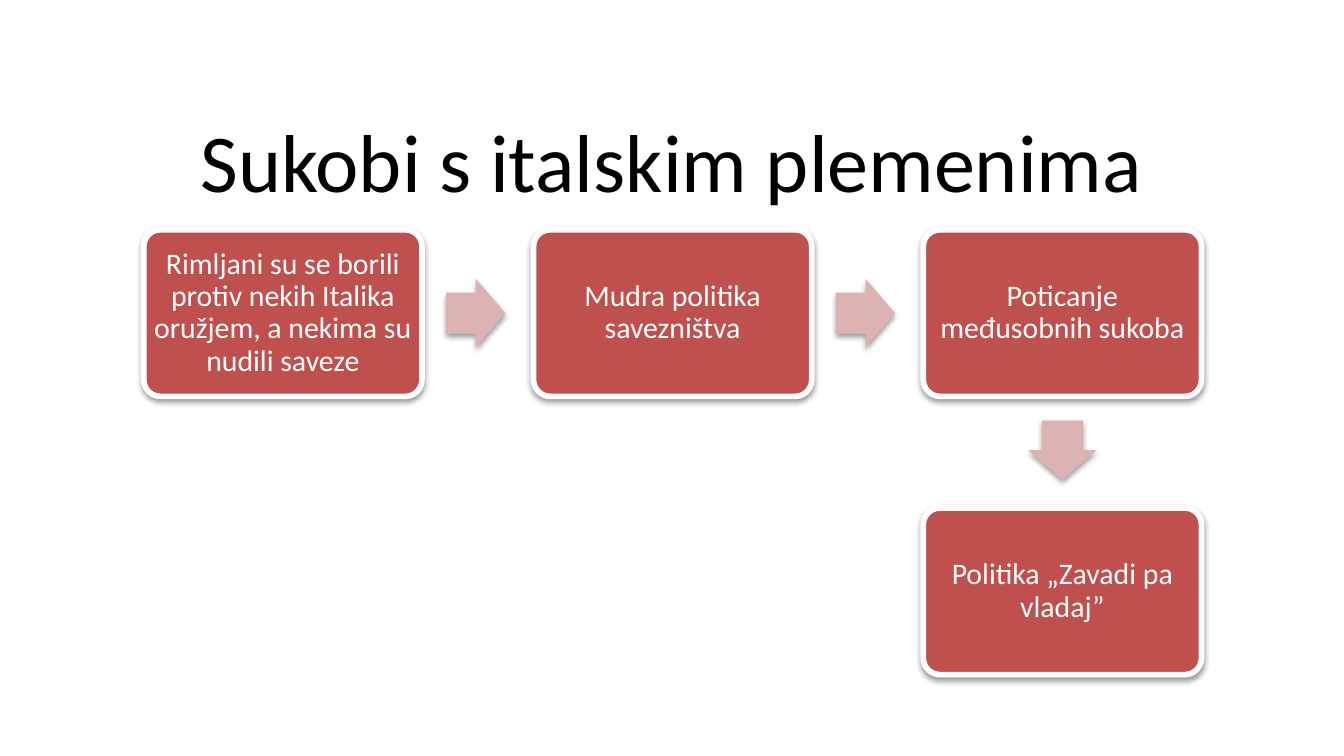
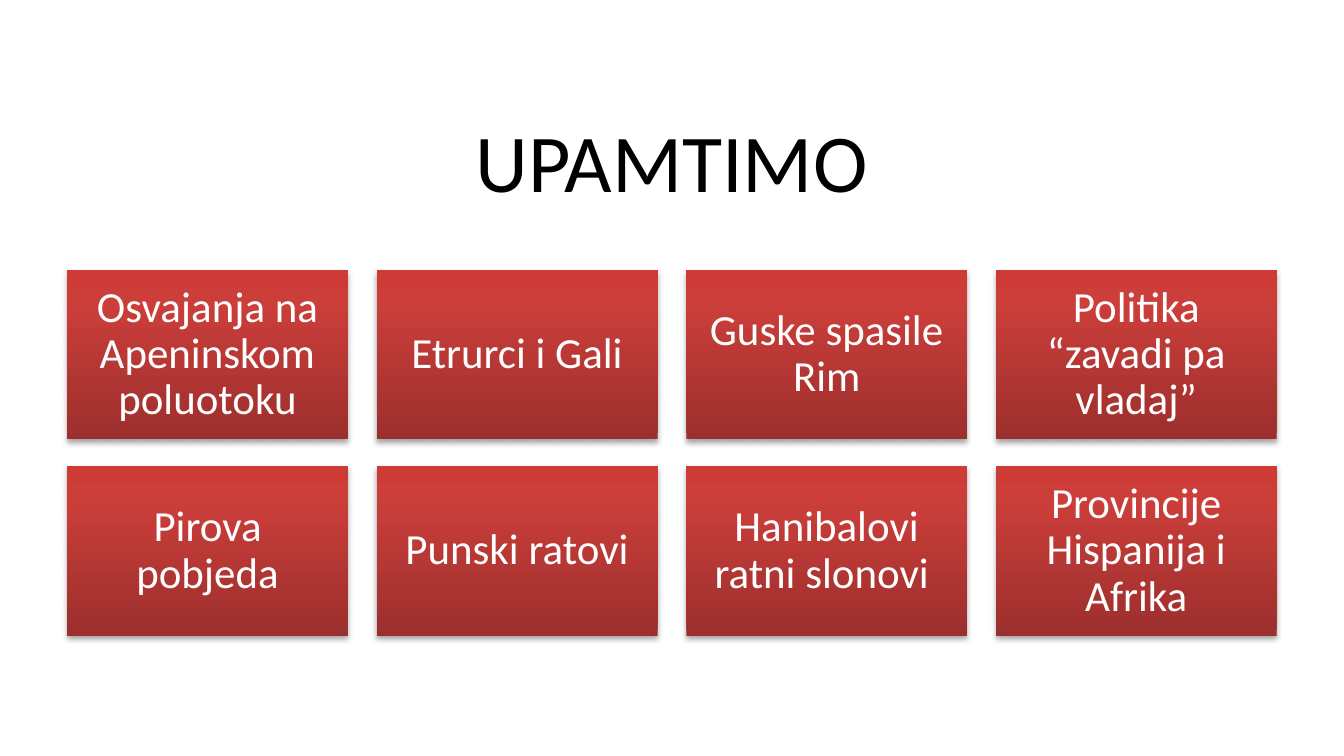
from dataclasses import dataclass

from lxml.etree import SubElement
from pptx import Presentation
from pptx.dml.color import RGBColor
from pptx.enum.shapes import MSO_SHAPE
from pptx.enum.text import MSO_ANCHOR, PP_ALIGN
from pptx.oxml.ns import qn
from pptx.shapes.autoshape import Shape
from pptx.slide import Slide
from pptx.util import Inches, Pt

WIDTH = 10
HEIGHT = WIDTH * 9 / 16
MARGIN = 0.05 * WIDTH
FONT = "Calibri"
COLORS = {
    "title": "000000",
    "text": "FFFFFF",
    "step": "C0504D",
    "step_edge": "FFFFFF",
    "arrow": "DCB3B2",
    "shadow": "000000",
    "tile_dark": "9C2F2D",
    "tile_mid": "CB3E3A",
    "tile_light": "CE3B37",
}
TILE_STOPS = ((0, "tile_dark"), (80, "tile_mid"), (100, "tile_light"))


@dataclass(frozen=True)
class Area:
    left: float
    top: float
    width: float
    height: float

    def lengths(self) -> tuple:
        return tuple(Inches(v) for v in (self.left, self.top, self.width, self.height))


@dataclass(frozen=True)
class Grid:
    left: float
    top: float
    cell_width: float
    cell_height: float
    column_gap: float
    row_gap: float

    def cell(self, column: int, row: int) -> Area:
        return Area(
            self.left + column * (self.cell_width + self.column_gap),
            self.top + row * (self.cell_height + self.row_gap),
            self.cell_width,
            self.cell_height,
        )


@dataclass(frozen=True)
class Shadow:
    opacity: int
    distance: float
    blur: float = 3.1


@dataclass(frozen=True)
class Card:
    text: str
    column: int
    row: int


# Step chart: three columns, the last one continuing downwards
STEP_GRID = Grid(1.07, 1.71, 2.07, 1.24, 0.83, 0.83)
STEP_SHADOW = Shadow(opacity=38, distance=1.6)
STEPS = (
    Card("Rimljani su se borili protiv nekih Italika oružjem, a nekima su nudili saveze", 0, 0),
    Card("Mudra politika savezništva", 1, 0),
    Card("Poticanje međusobnih sukoba", 2, 0),
    Card("Politika „Zavadi pa vladaj”", 2, 1),
)
ARROW_LENGTH, ARROW_BREADTH, ARROW_OFFSET = 0.44, 0.51, 0.18

# Summary tiles: four columns across the width between the margins
TILE_COLUMNS = 4
TILE_WIDTH = 2.09
TILE_GAP = (WIDTH - 2 * MARGIN - TILE_COLUMNS * TILE_WIDTH) / (TILE_COLUMNS - 1)
TILE_GRID = Grid(MARGIN, 2.01, TILE_WIDTH, 1.26, TILE_GAP, 0.2)
TILE_SHADOW = Shadow(opacity=35, distance=1.8)
TILE_TEXTS = (
    "Osvajanja na Apeninskom poluotoku",
    "Etrurci i Gali",
    "Guske spasile Rim",
    "Politika “zavadi pa vladaj”",
    "Pirova pobjeda",
    "Punski ratovi",
    "Hanibalovi ratni slonovi ",
    "Provincije Hispanija i Afrika",
)


def rgb(name: str) -> RGBColor:
    return RGBColor.from_string(COLORS[name])


def write_text(box: Shape, text: str, size: int, color: str) -> None:
    frame = box.text_frame
    frame.word_wrap = True
    frame.vertical_anchor = MSO_ANCHOR.MIDDLE
    frame.text = text
    para = frame.paragraphs[0]
    para.alignment = PP_ALIGN.CENTER
    para.line_spacing = 0.9
    font = para.runs[0].font
    font.name, font.size = FONT, Pt(size)
    font.color.rgb = rgb(color)


def write_label(box: Shape, text: str, size: int, inset: float) -> None:
    write_text(box, text, size, "text")
    frame = box.text_frame
    frame.margin_left = frame.margin_right = Inches(inset)
    frame.margin_top = frame.margin_bottom = Inches(inset)
    properties = frame.paragraphs[0]._p.get_or_add_pPr()
    SubElement(SubElement(properties, qn("a:spcAft")), qn("a:spcPct"), val="35000")


def add_shadow(shape: Shape, shadow: Shadow) -> None:
    shape.shadow.inherit = False
    effects = shape._element.spPr.find(qn("a:effectLst"))
    outer = SubElement(
        effects, qn("a:outerShdw"), blurRad=str(Pt(shadow.blur)),
        dist=str(Pt(shadow.distance)), dir="5400000", rotWithShape="0",
    )
    color = SubElement(outer, qn("a:srgbClr"), val=COLORS["shadow"])
    SubElement(color, qn("a:alpha"), val=str(shadow.opacity * 1000))


def fill_tile(tile: Shape) -> None:
    tile.fill.gradient()
    tile.fill.gradient_angle = 90
    stops = tile._element.spPr.find(qn("a:gradFill")).find(qn("a:gsLst"))
    for stop in list(stops):
        stops.remove(stop)
    for position, name in TILE_STOPS:
        stop = SubElement(stops, qn("a:gs"), pos=str(position * 1000))
        SubElement(stop, qn("a:srgbClr"), val=COLORS[name])


def add_step(page: Slide, step: Card) -> None:
    area = STEP_GRID.cell(step.column, step.row)
    box = page.shapes.add_shape(MSO_SHAPE.ROUNDED_RECTANGLE, *area.lengths())
    box.adjustments[0] = 0.1
    box.fill.solid()
    box.fill.fore_color.rgb = rgb("step")
    box.line.color.rgb = rgb("step_edge")
    box.line.width = Pt(3)
    add_shadow(box, STEP_SHADOW)
    write_label(box, step.text, 16, inset=0.03)


def add_arrow(page: Slide, start: Card, end: Card) -> None:
    area = STEP_GRID.cell(start.column, start.row)
    center_x = area.left + area.width / 2
    center_y = area.top + area.height / 2
    reach = ARROW_OFFSET + ARROW_LENGTH / 2
    down = end.row > start.row
    if down:
        center_y += area.height / 2 + reach
    else:
        center_x += area.width / 2 + reach
    place = Area(center_x - ARROW_LENGTH / 2, center_y - ARROW_BREADTH / 2,
                 ARROW_LENGTH, ARROW_BREADTH)
    arrow = page.shapes.add_shape(MSO_SHAPE.RIGHT_ARROW, *place.lengths())
    arrow.adjustments[0], arrow.adjustments[1] = 0.6, 0.5
    arrow.rotation = 90 if down else 0
    arrow.fill.solid()
    arrow.fill.fore_color.rgb = rgb("arrow")
    arrow.line.fill.background()
    add_shadow(arrow, STEP_SHADOW)


def add_tile(page: Slide, card: Card) -> None:
    area = TILE_GRID.cell(card.column, card.row)
    tile = page.shapes.add_shape(MSO_SHAPE.RECTANGLE, *area.lengths())
    fill_tile(tile)
    tile.line.fill.background()
    add_shadow(tile, TILE_SHADOW)
    write_label(tile, card.text, 23, inset=0.1)


def add_page(deck: Presentation, title: str) -> Slide:
    page = deck.slides.add_slide(deck.slide_layouts[6])
    area = Area(MARGIN, 0.15 * HEIGHT, WIDTH - 2 * MARGIN, 0.78)
    write_text(page.shapes.add_textbox(*area.lengths()), title, 44, "title")
    return page


def main() -> None:
    deck = Presentation()
    deck.slide_width, deck.slide_height = Inches(WIDTH), Inches(HEIGHT)

    # Conflicts with the Italic tribes
    page = add_page(deck, "Sukobi s italskim plemenima")
    for step in STEPS:
        add_step(page, step)
    for start, end in zip(STEPS, STEPS[1:]):
        add_arrow(page, start, end)

    # Points to remember
    page = add_page(deck, "UPAMTIMO")
    for index, text in enumerate(TILE_TEXTS):
        row, column = divmod(index, TILE_COLUMNS)
        add_tile(page, Card(text, column, row))

    deck.save("out.pptx")


if __name__ == "__main__":
    main()
